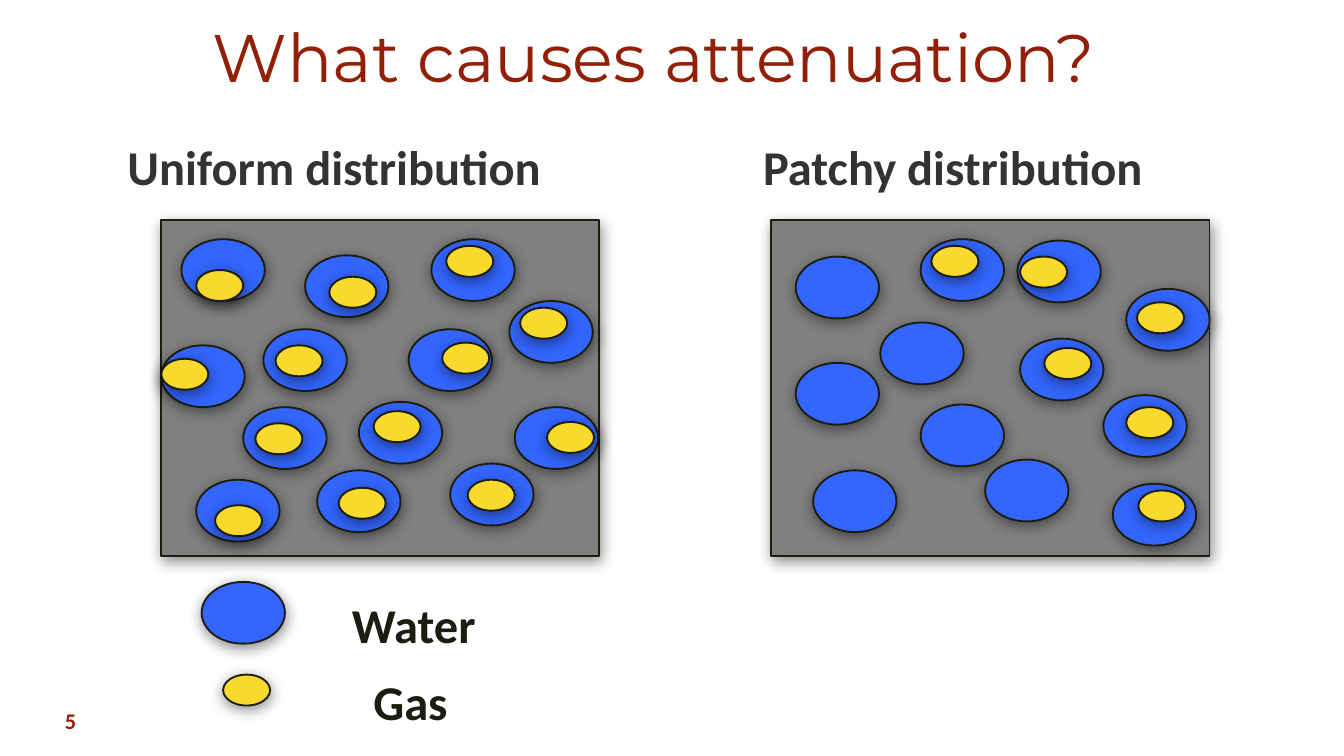
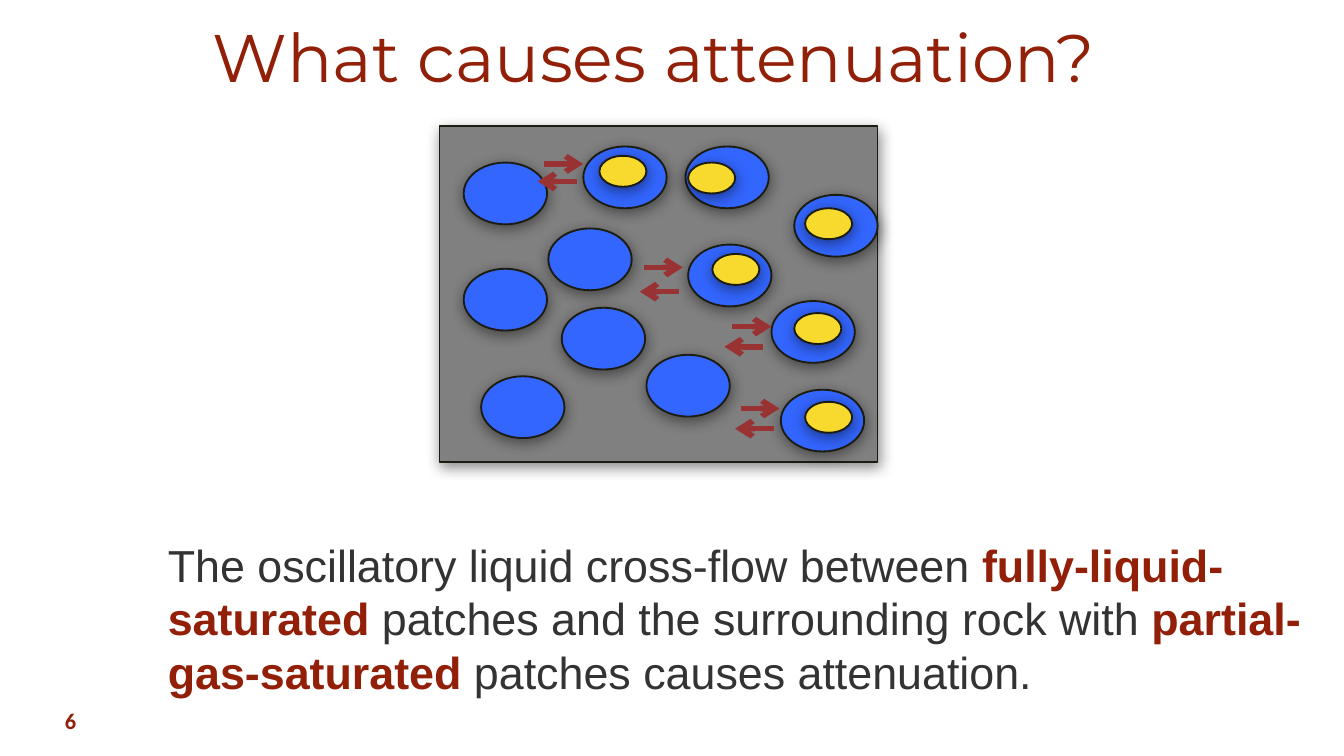
from lxml import etree
from pptx import Presentation
from pptx.dml.color import RGBColor
from pptx.enum import shapes, text
from pptx.oxml import ns
from pptx.util import Inches, Pt

RED = "921F07"
GREY = "333333"
INK = "1C1C10"
ROCK = "808080"
WATER = "3366FF"
GAS = "F8D92D"
FLOW = "993232"

SLIDE_WIDTH = 10
WATER_SIZE = (0.62, 0.46)
GAS_SIZE = (0.35, 0.23)
PANEL_SIZE = (3.26, 2.5)
FLOW_LENGTH = 0.29

UNIFORM_WATER = [
    (0.15, 0.14), (1.07, 0.26), (0.76, 0.81), (0, 0.93), (2.01, 0.14),
    (0.61, 1.39), (1.47, 1.35), (1.84, 0.81), (2.63, 1.39), (0.26, 1.93),
    (1.16, 1.86), (2.15, 1.81), (2.59, 0.6),
]
UNIFORM_GAS = [
    (0.26, 0.37), (2.67, 0.65), (0, 1.03), (0.85, 0.93), (2.09, 0.91),
    (2.87, 1.5), (0.7, 1.51), (1.58, 1.42), (0.4, 2.12), (1.32, 1.99),
    (2.28, 1.93), (1.25, 0.42), (2.12, 0.19),
]
PATCHY_WATER = [
    (0.18, 0.27), (0.18, 1.06), (0.81, 0.76), (2.47, 1.3), (1.85, 0.88),
    (2.64, 0.51), (1.83, 0.15), (0.31, 1.86), (2.54, 1.96),
]
PATCHY_GAS = [(1.85, 0.27), (2.03, 0.95), (2.64, 1.39), (2.72, 0.61)]

FLOWS = [
    ((4.05, 1.22), (4.29, 1.35)),
    ((4.79, 1.99), (5.05, 2.17)),
    ((5.45, 2.43), (5.68, 2.58)),
    ((5.51, 3.04), (5.76, 3.19)),
]


def color(value):
    return RGBColor.from_string(value)


def add_xml(parent, tag, **attributes):
    return etree.SubElement(parent, ns.qn(tag), attributes)


class Deck:
    def __init__(self):
        self.presentation = Presentation()
        self.presentation.slide_width = Inches(SLIDE_WIDTH)
        self.presentation.slide_height = Inches(SLIDE_WIDTH * 9 / 16)
        self.slide = None

    def new_slide(self, title, number):
        self.slide = self.presentation.slides.add_slide(self.presentation.slide_layouts[6])
        middle = {"align": text.PP_ALIGN.CENTER, "anchor": text.MSO_ANCHOR.MIDDLE}
        self.text((0.38, 0.05, 8.97, 0.72), [(title, RED, False)], 36, "Montserrat", **middle)
        self.text((0.19, 5.21, 0.67, 0.3), [(number, RED, True)], 12, "Calibri", **middle)

    def text(self, box, runs, size, font, align=text.PP_ALIGN.LEFT,
             anchor=text.MSO_ANCHOR.TOP):
        shape = self.slide.shapes.add_textbox(*map(Inches, box))
        frame = shape.text_frame
        frame.word_wrap = True
        frame.vertical_anchor = anchor
        paragraph = frame.paragraphs[0]
        paragraph.alignment = align
        for words, fill, bold in runs:
            run = paragraph.add_run()
            run.text = words
            run.font.size = Pt(size)
            run.font.name = font
            run.font.bold = bold
            run.font.color.rgb = color(fill)

    def label(self, left, top, width, words, fill):
        self.text((left, top, width, 0.54), [(words, fill, True)], 26, "Calibri")

    def shape(self, kind, position, size, fill):
        shape = self.slide.shapes.add_shape(kind, *map(Inches, position + size))
        shape.fill.solid()
        shape.fill.fore_color.rgb = color(fill)
        shape.line.color.rgb = color(INK)
        shape.line.width = Pt(1)
        shape.shadow.inherit = False
        effects = shape._element.spPr.find(ns.qn("a:effectLst"))
        shadow = add_xml(effects, "a:outerShdw", blurRad=str(Pt(8)), dist=str(Pt(2)),
                         dir=str(80 * 60000), algn="ctr", rotWithShape="0")
        shade = add_xml(shadow, "a:srgbClr", val="000000")
        add_xml(shade, "a:alpha", val="45000")

    def water(self, left, top):
        self.shape(shapes.MSO_SHAPE.OVAL, (left, top), WATER_SIZE, WATER)

    def gas(self, left, top):
        self.shape(shapes.MSO_SHAPE.OVAL, (left, top), GAS_SIZE, GAS)

    def rock(self, left, top, water_spots, gas_spots):
        self.shape(shapes.MSO_SHAPE.RECTANGLE, (left, top), PANEL_SIZE, ROCK)
        for x, y in water_spots:
            self.water(left + x, top + y)
        for x, y in gas_spots:
            self.gas(left + x, top + y)

    def flow_arrow(self, left, top, length):
        connector = self.slide.shapes.add_connector(
            shapes.MSO_CONNECTOR.STRAIGHT,
            Inches(left), Inches(top), Inches(left + length), Inches(top))
        connector.line.color.rgb = color(FLOW)
        connector.line.width = Pt(3)
        add_xml(connector.line._get_or_add_ln(), "a:tailEnd", type="arrow")
        add_xml(connector._element.spPr, "a:effectLst")


def distribution_slide(deck):
    deck.new_slide("What causes attenuation?", "5")
    deck.label(0.85, 0.97, 4.16, "Uniform distribution", GREY)
    deck.label(5.58, 0.97, 4.16, "Patchy distribution", GREY)
    deck.rock(1.2, 1.64, UNIFORM_WATER, UNIFORM_GAS)
    deck.rock(5.74, 1.64,
              PATCHY_WATER + [(1.11, 0.14), (1.11, 1.37), (1.59, 1.78)],
              PATCHY_GAS + [(1.19, 0.19), (2.73, 2.01)])
    deck.water(1.5, 4.33)
    deck.label(2.52, 4.38, 1.9, "Water", INK)
    deck.gas(1.66, 5.02)
    deck.label(2.68, 4.95, 1.16, "Gas", INK)


def cross_flow_slide(deck):
    deck.new_slide("What causes attenuation?", "6")
    deck.rock(3.27, 0.94,
              PATCHY_WATER + [(1.07, 0.15), (0.91, 1.35), (1.54, 1.7)],
              PATCHY_GAS + [(1.19, 0.22), (2.72, 2.05)])
    deck.text((1.15, 3.95, 8.85, 1.3), [
        ("The oscillatory liquid cross-flow between ", GREY, False),
        ("fully-liquid-saturated", RED, True),
        (" patches and the surrounding rock with ", GREY, False),
        ("partial-gas-saturated ", RED, True),
        ("patches causes attenuation.", GREY, False),
    ], 24, "Arial")
    for outward, back in FLOWS:
        deck.flow_arrow(*outward, FLOW_LENGTH)
        deck.flow_arrow(*back, -FLOW_LENGTH)


def main():
    deck = Deck()
    distribution_slide(deck)
    cross_flow_slide(deck)
    deck.presentation.save("out.pptx")


if __name__ == "__main__":
    main()
